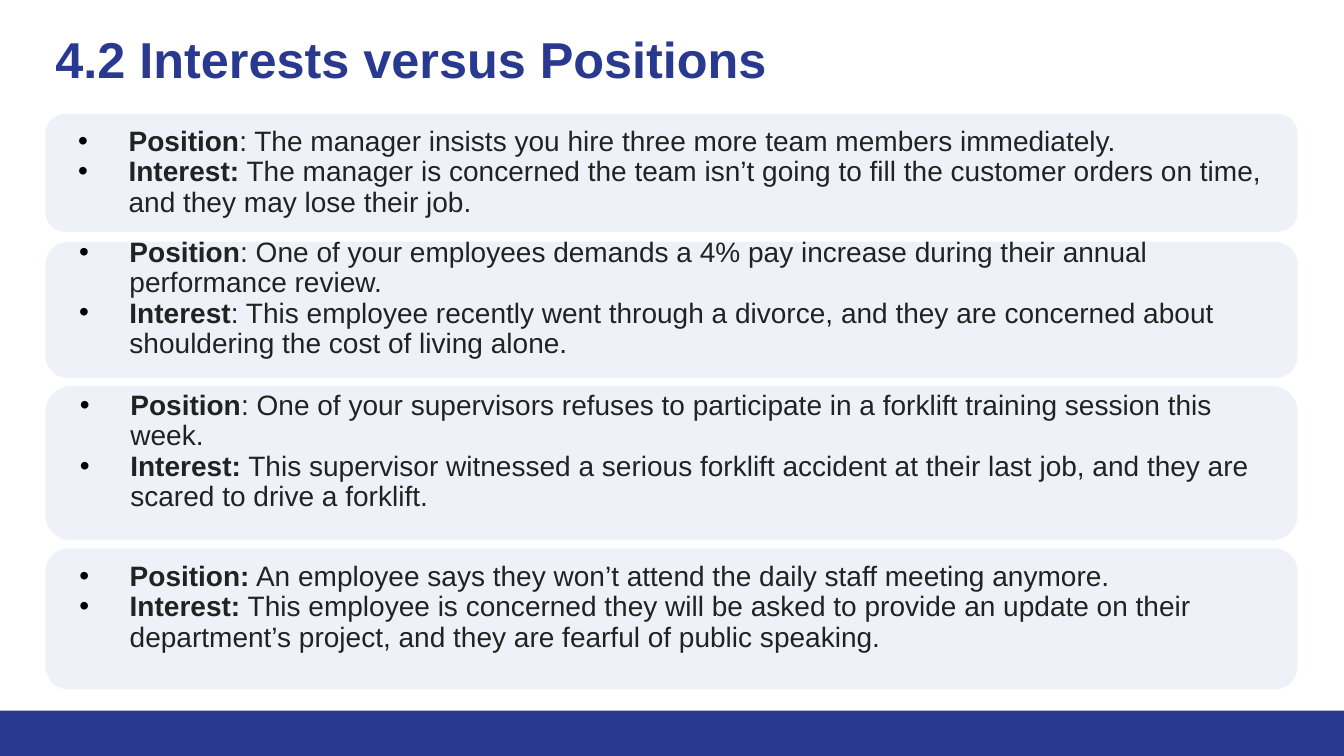
import pptx
import pptx.dml.color
import pptx.enum.shapes
import pptx.enum.text
import pptx.oxml
import pptx.oxml.ns
import pptx.util
from dataclasses import dataclass

Inches = pptx.util.Inches
Shapes = pptx.enum.shapes.MSO_SHAPE
Anchor = pptx.enum.text.MSO_ANCHOR
Align = pptx.enum.text.PP_ALIGN


@dataclass(frozen=True)
class Theme:
    font: str = "Arial"
    navy: str = "2A3990"
    card: str = "C9D3EB"
    card_alpha: int = 30000
    text: str = "222222"
    bullet: str = "000000"
    title_size: int = 36
    body_size: int = 20
    line_spacing: float = 0.9


theme = Theme()


def add_panel(kind, left, top, width, height, color):
    panel = slide.shapes.add_shape(
        kind, Inches(left), Inches(top), Inches(width), Inches(height))
    panel.shadow.inherit = False
    panel.fill.solid()
    panel.fill.fore_color.rgb = pptx.dml.color.RGBColor.from_string(color)
    panel.line.fill.background()
    return panel


def style_font(font, size, color, bold):
    values = {"name": theme.font, "size": pptx.util.Pt(size), "bold": bold}
    for name, value in values.items():
        setattr(font, name, value)
    font.color.rgb = pptx.dml.color.RGBColor.from_string(color)


deck = pptx.Presentation()
deck.slide_width = Inches(13.33)
deck.slide_height = Inches(7.5)
slide = deck.slides.add_slide(deck.slide_layouts.get_by_name("Title Only"))

# Footer bar
add_panel(Shapes.RECTANGLE, 0, 7.05, 13.33, 0.45, theme.navy)

# Title
margin, content_width = 0.45, 12.42
title = slide.shapes.title
title_place = {"left": margin, "top": 0.25, "width": content_width, "height": 0.89}
for name, value in title_place.items():
    setattr(title, name, Inches(value))
frame = title.text_frame
for side in ("left", "top", "right", "bottom"):
    setattr(frame, f"margin_{side}", Inches(0.1))
frame.vertical_anchor = Anchor.TOP
frame.auto_size = pptx.enum.text.MSO_AUTO_SIZE.NONE
frame.text = "4.2 Interests versus Positions"
para = frame.paragraphs[0]
para.alignment = Align.LEFT
para.line_spacing = theme.line_spacing
style_font(para.runs[0].font, theme.title_size, theme.navy, True)

# Cards: top, height, bottom inset, then (label, statement) pairs
cards = [
    (1.13, 1.17, 0.05, [
        ("Position", ": The manager insists you hire three more team members immediately."),
        ("Interest:", " The manager is concerned the team isn’t going to fill the customer "
                      "orders on time, and they may lose their job."),
    ]),
    (2.4, 1.35, 0.27, [
        ("Position", ": One of your employees demands a 4% pay increase during their annual "
                     "performance review."),
        ("Interest", ": This employee recently went through a divorce, and they are concerned "
                     "about shouldering the cost of living alone."),
    ]),
    (3.83, 1.53, 0.27, [
        ("Position", ": One of your supervisors refuses to participate in a forklift training "
                     "session this week."),
        ("Interest:", " This supervisor witnessed a serious forklift accident at their last "
                      "job, and they are scared to drive a forklift."),
    ]),
    (5.44, 1.4, 0.27, [
        ("Position:", " An employee says they won’t attend the daily staff meeting anymore."),
        ("Interest:", " This employee is concerned they will be asked to provide an update on "
                      "their department’s project, and they are fearful of public speaking."),
    ]),
]
namespace = pptx.oxml.ns.nsdecls("a")
for top, height, bottom_inset, statements in cards:
    card = add_panel(Shapes.ROUNDED_RECTANGLE, margin, top, content_width, height, theme.card)
    color = card.fill._xPr.find(".//" + pptx.oxml.ns.qn("a:srgbClr"))
    color.append(pptx.oxml.parse_xml(f'<a:alpha {namespace} val="{theme.card_alpha}"/>'))

    frame = card.text_frame
    frame.word_wrap = True
    frame.vertical_anchor = Anchor.MIDDLE
    frame.margin_bottom = Inches(bottom_inset)
    for index, statement in enumerate(statements):
        para = frame.add_paragraph() if index else frame.paragraphs[0]
        para.alignment = Align.LEFT
        para.line_spacing = theme.line_spacing
        properties = para._p.get_or_add_pPr()
        properties.set("marL", str(Inches(0.67)))
        properties.set("indent", str(Inches(-0.5)))
        for element in (
            f'<a:buClr {namespace}><a:srgbClr val="{theme.bullet}"/></a:buClr>',
            f'<a:buFont {namespace} typeface="{theme.font}"/>',
            f'<a:buChar {namespace} char="•"/>',
        ):
            properties.append(pptx.oxml.parse_xml(element))
        for text, bold in zip(statement, (True, False)):
            span = para.add_run()
            span.text = text
            style_font(span.font, theme.body_size, theme.text, bold)

deck.save("out.pptx")
